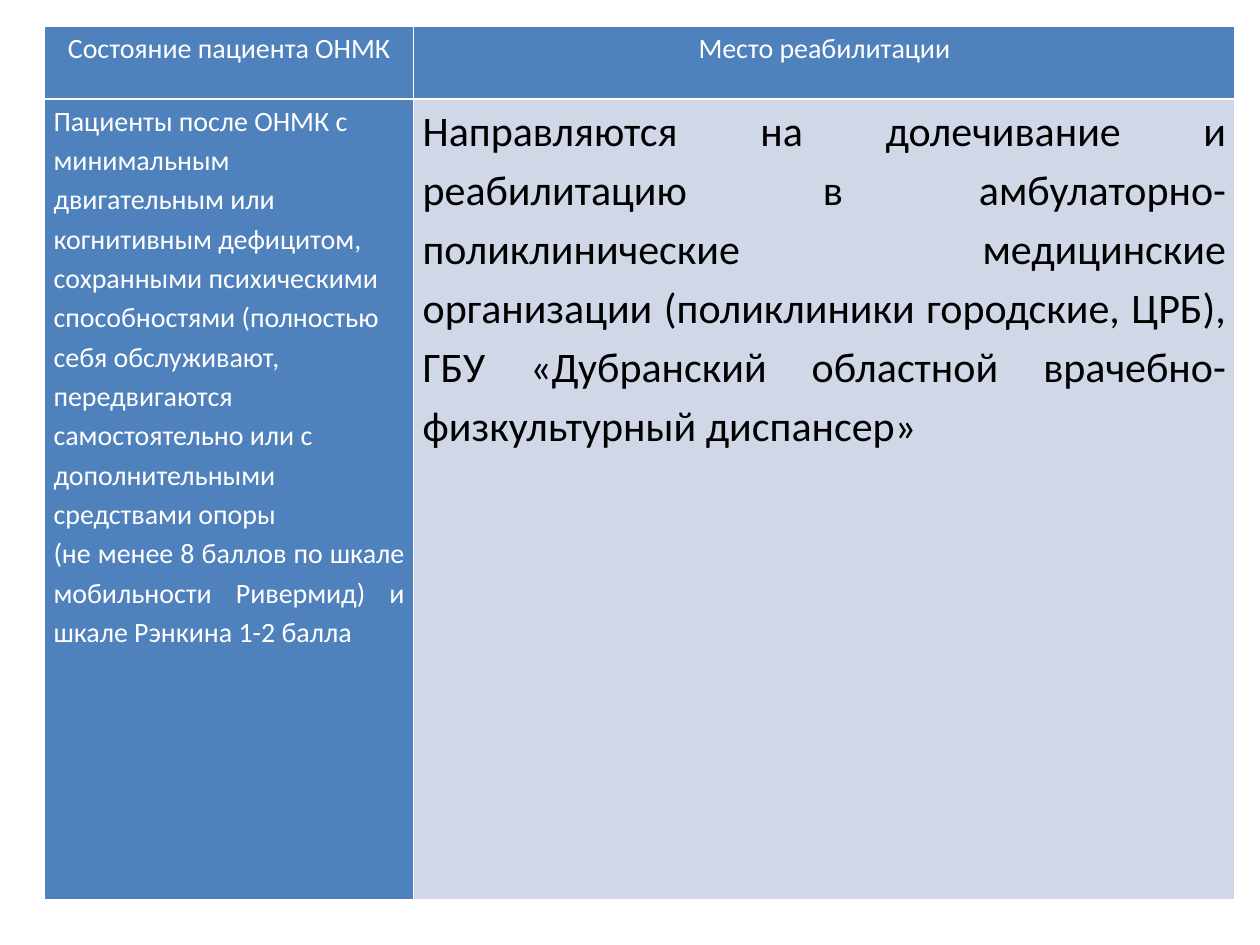
import pptx
import pptx.dml.color
import pptx.enum.text
import pptx.oxml
import pptx.oxml.ns
import pptx.util
from pptx.dml.color import RGBColor
from pptx.util import Cm

WHITE = RGBColor(0xFF, 0xFF, 0xFF)
BLACK = RGBColor(0x00, 0x00, 0x00)
BLUE = RGBColor(0x4F, 0x81, 0xBD)
PALE_BLUE = RGBColor(0xD0, 0xD8, 0xE8)

ALIGN = pptx.enum.text.PP_ALIGN
FONT = "Calibri"
COLUMN_WIDTHS = (7.44, 16.56)
ROW_HEIGHTS = (1.47, 16.13)

HEADINGS = ("Состояние пациента ОНМК", "Место реабилитации")
CONDITION = (
    "Пациенты после ОНМК с минимальным двигательным или когнитивным дефицитом, "
    "сохранными психическими способностями (полностью себя обслуживают, "
    "передвигаются самостоятельно или с дополнительными средствами опоры"
)
SCORES = "(не менее 8 баллов по шкале мобильности Ривермид) и шкале Рэнкина 1-2 балла"
REFERRAL = (
    "Направляются на долечивание и реабилитацию в амбулаторно-поликлинические "
    "медицинские организации (поликлиники городские, ЦРБ), "
    "ГБУ «Дубранский областной врачебно-физкультурный диспансер»"
)


def write_para(para, text, *, size=16, color=WHITE, align=ALIGN.LEFT):
    """Write one formatted paragraph."""
    para.alignment = align
    para.line_spacing = 1.15
    span = para.add_run()
    span.text = text
    span.font.name = FONT
    span.font.size = pptx.util.Pt(size)
    span.font.bold = False
    span.font.color.rgb = color


def style_cell(cell, fill):
    """Set the margins, white borders and fill of a cell."""
    cell.margin_left = cell.margin_right = Cm(0.18)
    cell.margin_top = cell.margin_bottom = Cm(0)
    cell.fill.solid()
    cell.fill.fore_color.rgb = fill
    properties = cell._tc.get_or_add_tcPr()
    for position, side in enumerate(("lnL", "lnR", "lnT", "lnB")):
        border = pptx.oxml.parse_xml(
            f'<a:{side} {pptx.oxml.ns.nsdecls("a")} w="12700"><a:solidFill>'
            f'<a:srgbClr val="{WHITE}"/></a:solidFill></a:{side}>'
        )
        properties.insert(position, border)


def add_grid(page):
    """Add the empty table with its column and row sizes."""
    frame = page.shapes.add_table(
        len(ROW_HEIGHTS), len(COLUMN_WIDTHS),
        Cm(0.9), Cm(0.53), Cm(sum(COLUMN_WIDTHS)), Cm(sum(ROW_HEIGHTS)),
    )
    table = frame.table
    table.horz_banding = False
    for column, width in zip(table.columns, COLUMN_WIDTHS):
        column.width = Cm(width)
    for row, height in zip(table.rows, ROW_HEIGHTS):
        row.height = Cm(height)
    return table


def fill_table(table):
    """Style the cells and write their wording."""
    for index, heading in enumerate(HEADINGS):
        cell = table.cell(0, index)
        style_cell(cell, BLUE)
        write_para(cell.text_frame.paragraphs[0], heading, align=ALIGN.CENTER)

    condition = table.cell(1, 0)
    style_cell(condition, BLUE)
    write_para(condition.text_frame.paragraphs[0], CONDITION)
    write_para(condition.text_frame.add_paragraph(), SCORES, align=ALIGN.JUSTIFY)

    referral = table.cell(1, 1)
    style_cell(referral, PALE_BLUE)
    write_para(referral.text_frame.paragraphs[0], REFERRAL,
               size=24, color=BLACK, align=ALIGN.JUSTIFY)


def main():
    """Build and save the deck."""
    deck = pptx.Presentation()
    deck.slide_width = Cm(25.4)
    deck.slide_height = Cm(19.05)
    page = deck.slides.add_slide(deck.slide_layouts[6])
    fill_table(add_grid(page))
    deck.save("out.pptx")


if __name__ == "__main__":
    main()
